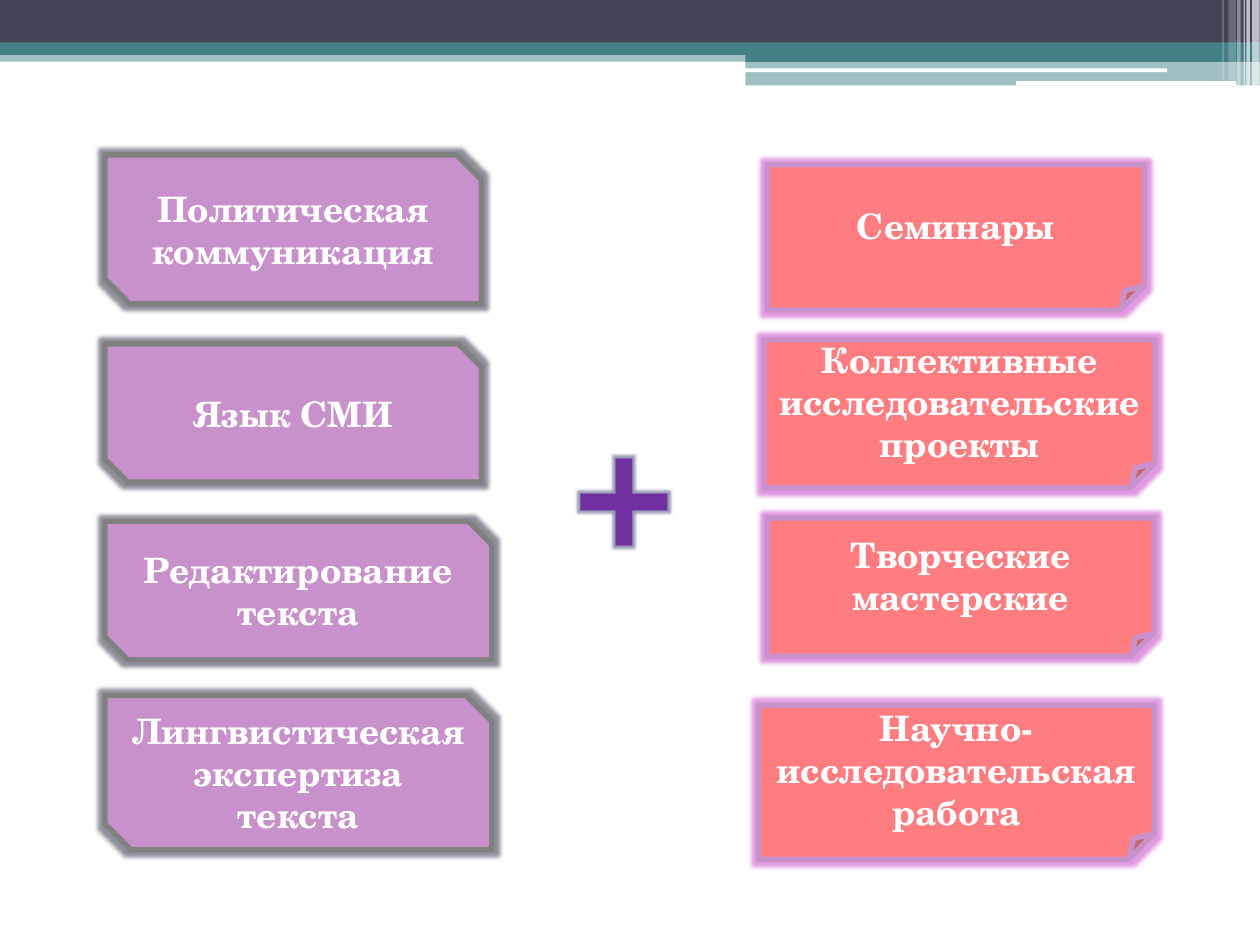
from lxml.etree import SubElement
from pptx import Presentation
from pptx.dml.color import RGBColor
from pptx.enum.shapes import MSO_SHAPE as Shape
from pptx.enum.text import MSO_ANCHOR as Anchor, MSO_AUTO_SIZE as AutoSize, PP_ALIGN as Align
from pptx.oxml.ns import qn
from pptx.util import Pt

WHITE = RGBColor(0xFF, 0xFF, 0xFF)
SLATE = RGBColor(0x42, 0x44, 0x56)
TEAL = RGBColor(0x43, 0x80, 0x86)
LILAC = RGBColor(0xC9, 0x91, 0xCB)
GREY = RGBColor(0x80, 0x80, 0x80)
CORAL = RGBColor(0xFF, 0x7C, 0x80)
PURPLE = RGBColor(0x70, 0x30, 0xA0)
PINK_GLOW = RGBColor(0xCC, 0x55, 0xCC)
BLUE_GLOW = RGBColor(0x53, 0x54, 0x8A)
FONT = "TeX Gyre Schola"

# Header bands: left, top, width, height, colour, opacity in percent
BANDS = [
    (0, 28.8, 720, 6.5, TEAL, 50),
    (0, 0, 720, 24.5, SLATE, 100),
    (0, 24.2, 720, 7.2, TEAL, 100),
    (426, 28.2, 294, 7.2, TEAL, 100),
    (426, 34.6, 294, 14.2, TEAL, 50),
]
# Rounded white rules below the bands: left, top, width, height
RULES = [(425.5, 39.1, 241.5, 2.2), (580.5, 46.3, 126, 2.7)]
# Vertical stripes at the right end: left, width, height, opacity
STRIPES = [
    (715.5, 4.3, 49, 65),
    (712.2, 2, 49, 65),
    (710.7, 0.7, 49, 60),
    (707, 2, 49, 40),
    (702, 4.3, 46, 20),
    (698.5, 0.7, 46, 30),
]
# Cards: left, top, width, height, text
SUBJECTS = [
    (60, 88.5, 215, 85, "Политическая коммуникация"),
    (60, 196.5, 215, 79, "Язык СМИ"),
    (60, 298, 221, 79, "Редактирование текста"),
    (60, 397.5, 221, 88, "Лингвистическая экспертиза текста"),
]
FORMATS = [
    (438.5, 94.2, 215.5, 83, "Семинары"),
    (436.5, 194.2, 223.5, 84.5, "Коллективные исследовательские проекты"),
    (438.5, 296, 221, 79, "Творческие мастерские"),
    (433.5, 403, 226, 88, "Научно-исследовательская работа"),
]


def add_box(slide, kind, bounds, color):
    """Add a filled shape with no line and no shadow."""
    sp = slide.shapes.add_shape(kind, *map(Pt, bounds))
    sp.shadow.inherit = False
    sp.fill.solid()
    sp.fill.fore_color.rgb = color
    sp.line.fill.background()
    return sp


def set_opacity(sp, percent):
    clr = sp._element.spPr.find(qn("a:solidFill"))[0]
    SubElement(clr, qn("a:alpha"), val=str(percent * 1000))


def add_glow(effects, color):
    glow = SubElement(effects, qn("a:glow"), rad=str(Pt(5)))
    clr = SubElement(glow, qn("a:srgbClr"), val=str(color))
    SubElement(clr, qn("a:alpha"), val="60000")


def set_font(font, size, color):
    font.name = FONT
    font.size = Pt(size)
    font.bold = True
    font.color.rgb = color


def add_header(slide):
    for *bounds, color, opacity in BANDS:
        set_opacity(add_box(slide, Shape.RECTANGLE, bounds, color), opacity)
    for bounds in RULES:
        add_box(slide, Shape.ROUNDED_RECTANGLE, bounds, WHITE)
    for left, width, height, opacity in STRIPES:
        sp = add_box(slide, Shape.RECTANGLE, (left, 0, width, height), WHITE)
        set_opacity(sp, opacity)


def add_cards(slide, cards, kind, fill, line, glow):
    for *bounds, text in cards:
        sp = add_box(slide, kind, bounds, fill)
        sp.line.color.rgb = line
        sp.line.width = Pt(3)
        add_glow(sp._element.spPr.find(qn("a:effectLst")), glow)
        tf = sp.text_frame
        tf.word_wrap = True
        tf.vertical_anchor = Anchor.MIDDLE
        p = tf.paragraphs[0]
        p.text = text
        p.alignment = Align.CENTER
        set_font(p.font, 20, WHITE)


def add_plus(slide):
    tf = slide.shapes.add_textbox(Pt(320.4), Pt(224.6), Pt(55.4), Pt(112.3)).text_frame
    tf.word_wrap = True
    tf.auto_size = AutoSize.SHAPE_TO_FIT_TEXT
    p = tf.paragraphs[0]
    p.line_spacing = 0.9
    r = p.add_run()
    r.text = "+"
    set_font(r.font, 96, PURPLE)
    # The effect list has to follow the fill directly
    rPr = r._r.get_or_add_rPr()
    effects = SubElement(rPr, qn("a:effectLst"))
    rPr.find(qn("a:solidFill")).addnext(effects)
    add_glow(effects, BLUE_GLOW)


def main():
    prs = Presentation()
    prs.slide_width, prs.slide_height = Pt(720), Pt(540)
    slide = prs.slides.add_slide(prs.slide_layouts[6])
    add_header(slide)
    add_cards(slide, SUBJECTS, Shape.SNIP_2_DIAG_RECTANGLE, LILAC, GREY, SLATE)
    add_plus(slide)
    add_cards(slide, FORMATS, Shape.FOLDED_CORNER, CORAL, LILAC, PINK_GLOW)
    prs.save("out.pptx")


if __name__ == "__main__":
    main()
